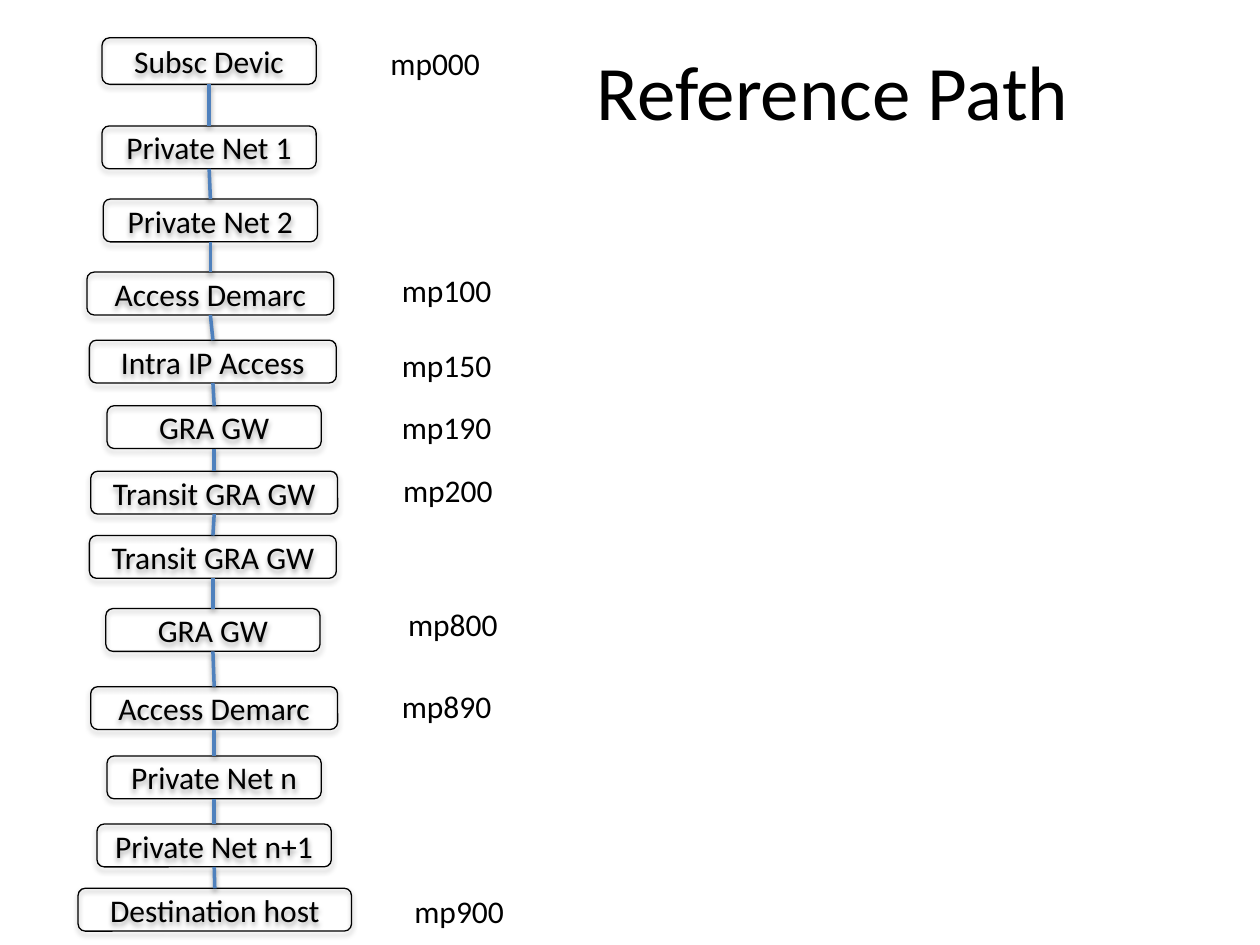
import pptx
import pptx.dml.color
import pptx.enum.shapes
import pptx.enum.text
import pptx.oxml
import pptx.oxml.ns
import pptx.util
from pptx.util import Inches

ANCHOR = pptx.enum.text.MSO_ANCHOR
ALIGN = pptx.enum.text.PP_ALIGN
TOP_SITE, BOTTOM_SITE = 0, 2
NODE_HEIGHT = 0.34

# label, left, top, width, height
NODES = [
    ("Subsc Devic", 0.81, 0.3, 1.7, 0.37),
    ("Private Net 1", 0.81, 1, 1.7, NODE_HEIGHT),
    ("Private Net 2", 0.82, 1.58, 1.7, NODE_HEIGHT),
    ("Access Demarc", 0.69, 2.16, 1.96, NODE_HEIGHT),
    ("Intra IP Access", 0.71, 2.7, 1.96, NODE_HEIGHT),
    ("GRA GW", 0.85, 3.22, 1.7, NODE_HEIGHT),
    ("Transit GRA GW", 0.72, 3.74, 1.96, NODE_HEIGHT),
    ("Transit GRA GW", 0.71, 4.25, 1.96, NODE_HEIGHT),
    ("GRA GW", 0.84, 4.83, 1.7, NODE_HEIGHT),
    ("Access Demarc", 0.72, 5.45, 1.96, NODE_HEIGHT),
    ("Private Net n", 0.85, 6, 1.7, NODE_HEIGHT),
    ("Private Net n+1", 0.77, 6.54, 1.86, NODE_HEIGHT),
    ("Destination host", 0.62, 7.05, 2.17, NODE_HEIGHT),
]

# label, left, top
MEASUREMENT_POINTS = [
    ("mp000", 3, 0.3),
    ("mp100", 3.09, 2.1),
    ("mp150", 3.09, 2.7),
    ("mp190", 3.09, 3.19),
    ("mp200", 3.1, 3.69),
    ("mp800", 3.14, 4.75),
    ("mp890", 3.09, 5.4),
    ("mp900", 3.19, 7.03),
]


def color(value):
    return pptx.dml.color.RGBColor.from_string(value)


def apply(target, values):
    for name, value in values.items():
        setattr(target, name, value)


class PathSlide:
    """Holds the style and the current slide."""

    font = "Calibri"
    ink = "000000"
    link_color = "4F81BD"

    def __init__(self, deck):
        self.page = deck.slides.add_slide(deck.slide_layouts[6])

    def set_text(self, shape, text, size, align, **frame_format):
        frame = shape.text_frame
        apply(frame, frame_format)
        para = frame.paragraphs[0]
        para.alignment = align
        span = para.add_run()
        span.text = text
        apply(span.font, {"name": self.font, "size": pptx.util.Pt(size)})
        span.font.color.rgb = color(self.ink)

    def outline(self, shape, line_color, width):
        shape.line.color.rgb = color(line_color)
        shape.line.width = pptx.util.Pt(width)

    def shadow(self, shape, alpha, distance):
        """Give the shape a soft black shadow straight below it."""
        shape._element.spPr.append(pptx.oxml.parse_xml(
            f'<a:effectLst {pptx.oxml.ns.nsdecls("a")}>'
            f'<a:outerShdw blurRad="{pptx.util.Pt(3.1)}" dist="{pptx.util.Pt(distance)}"'
            ' dir="5400000" rotWithShape="0">'
            f'<a:srgbClr val="{self.ink}"><a:alpha val="{alpha * 1000}"/></a:srgbClr>'
            '</a:outerShdw></a:effectLst>'))

    def title(self, text, *place):
        box = self.page.shapes.add_textbox(*map(Inches, place))
        self.set_text(box, text, 44, ALIGN.CENTER,
                      word_wrap=True, vertical_anchor=ANCHOR.MIDDLE)

    def node(self, text, *place):
        box = self.page.shapes.add_shape(
            pptx.enum.shapes.MSO_SHAPE.ROUNDED_RECTANGLE, *map(Inches, place))
        box.fill.background()
        self.outline(box, self.ink, 0.75)
        self.shadow(box, 35, 1.8)
        self.set_text(box, text, 18, ALIGN.CENTER, vertical_anchor=ANCHOR.MIDDLE)
        return box

    def link(self, upper, lower):
        line = self.page.shapes.add_connector(
            pptx.enum.shapes.MSO_CONNECTOR.STRAIGHT, 0, 0, 0, 0)
        line.begin_connect(upper, BOTTOM_SITE)
        line.end_connect(lower, TOP_SITE)
        self.outline(line, self.link_color, 2)
        self.shadow(line, 38, 1.6)

    def label(self, text, left, top):
        box = self.page.shapes.add_textbox(*map(Inches, (left, top, 0.92, 0.4)))
        self.set_text(box, text, 18, ALIGN.LEFT, word_wrap=False,
                      auto_size=pptx.enum.text.MSO_AUTO_SIZE.SHAPE_TO_FIT_TEXT)


def main():
    deck = pptx.Presentation()
    apply(deck, {"slide_width": Inches(10), "slide_height": Inches(7.5)})
    slide = PathSlide(deck)
    slide.title("Reference Path", 3.55, 0.09, 6.12, 1.25)
    nodes = [slide.node(*node) for node in NODES]
    for upper, lower in zip(nodes, nodes[1:]):
        slide.link(upper, lower)
    for point in MEASUREMENT_POINTS:
        slide.label(*point)
    deck.save("out.pptx")


if __name__ == "__main__":
    main()
